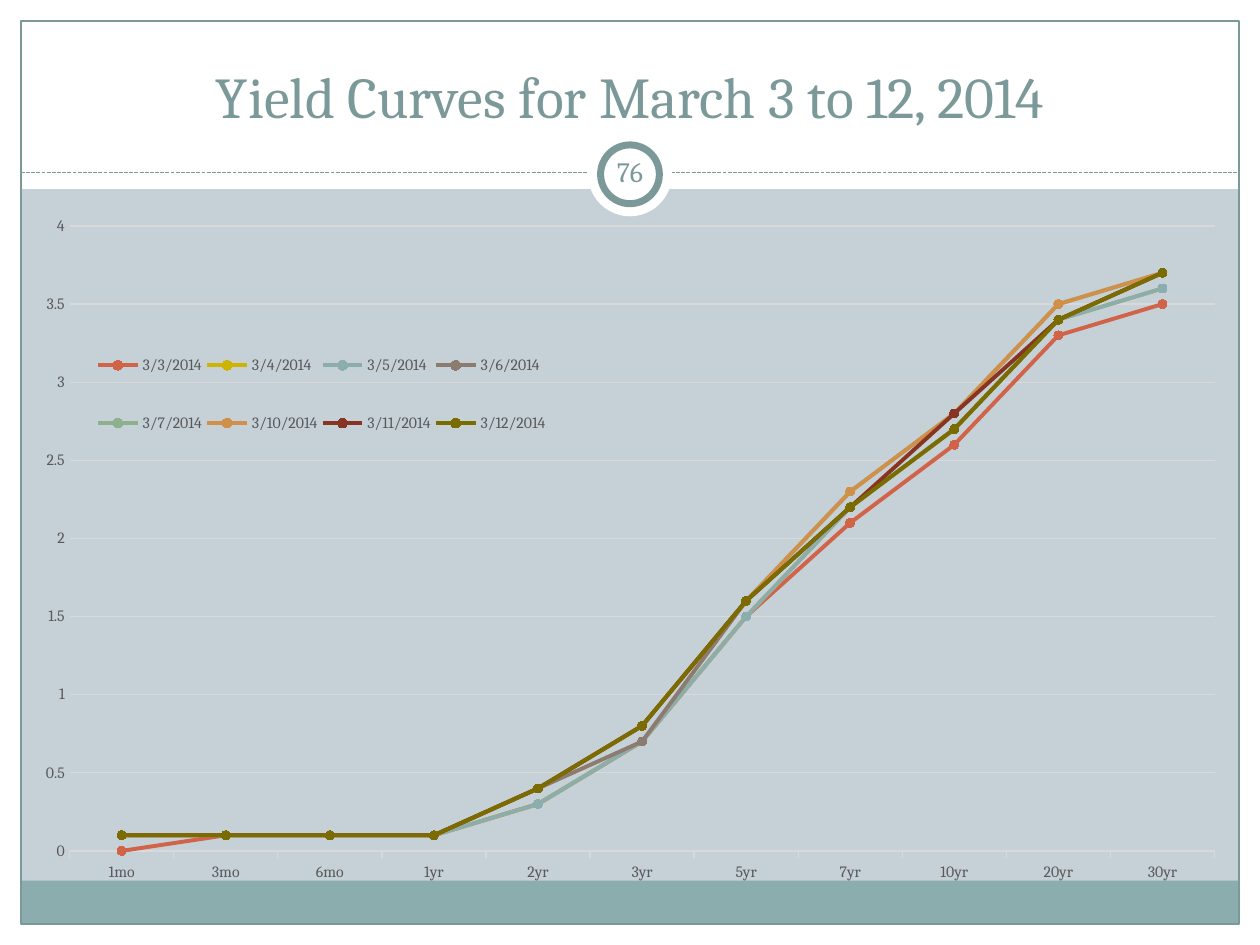
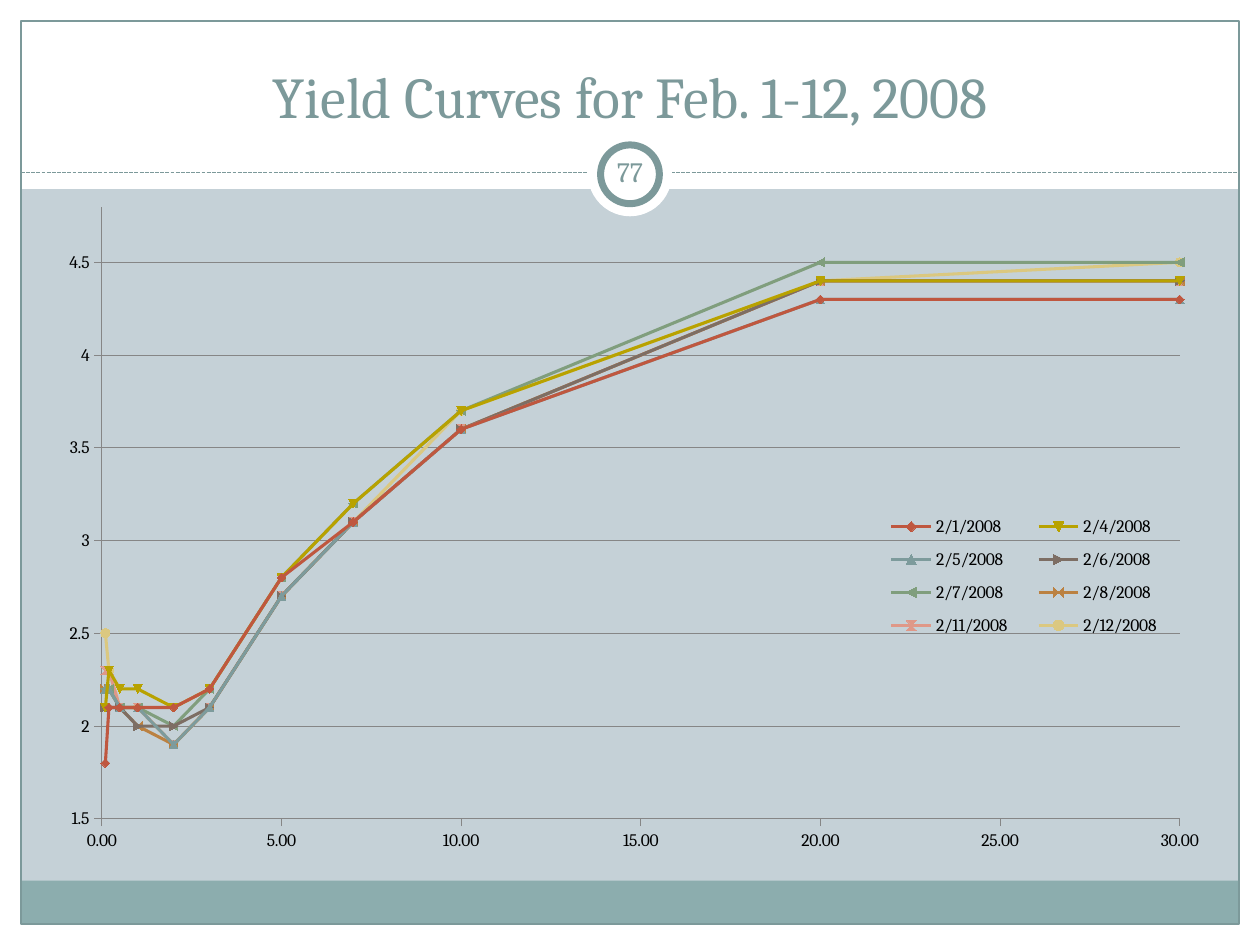
from dataclasses import dataclass
from typing import NamedTuple

from lxml.etree import SubElement
from pptx import Presentation
from pptx.chart.chart import Chart
from pptx.chart.data import CategoryChartData, XyChartData
from pptx.dml.color import RGBColor
from pptx.enum.chart import XL_CHART_TYPE as ChartType
from pptx.enum.chart import XL_LEGEND_POSITION as LegendPosition
from pptx.enum.chart import XL_MARKER_STYLE as MarkerStyle
from pptx.enum.chart import XL_TICK_MARK as TickMark
from pptx.enum.dml import MSO_LINE_DASH_STYLE as Dash
from pptx.enum.shapes import MSO_CONNECTOR as Connector
from pptx.enum.shapes import MSO_SHAPE as Preset
from pptx.enum.text import MSO_ANCHOR as Anchor
from pptx.enum.text import PP_ALIGN as Align
from pptx.oxml.ns import qn
from pptx.slide import Slide
from pptx.util import Emu, Inches, Pt

WIDTH, HEIGHT = Inches(10), Inches(7.5)
COLUMNS, ROWS = 60, 45


class Box(NamedTuple):
    """Left, top, width and height in grid cells."""

    left: float
    top: float
    width: float
    height: float


class Share(NamedTuple):
    """Left, top, width and height in percent of a chart."""

    x: float
    y: float
    w: float
    h: float


@dataclass(frozen=True)
class Theme:
    """Colours, font, type sizes and line widths of the slides."""

    font: str = "Cambria"
    paper: str = "C5D1D7"
    white: str = "FFFFFF"
    band: str = "8CADAE"
    accent: str = "7C999A"
    black: str = "000000"
    label: str = "595959"
    pale_grid: str = "D9D9D9"
    dark_grid: str = "868686"
    title_size: int = 33
    number_size: int = 16
    march_size: int = 9
    february_size: int = 10
    hairline: float = 0.75
    fine: float = 0.5
    ring: float = 4
    march_curve: float = 2.25
    february_curve: float = 1.75
    march_colors: tuple[str, ...] = (
        "D16349", "CCB400", "8CADAE", "8C7B70", "8FB08C", "D19049", "873522", "7A6C00")
    february_colors: tuple[str, ...] = (
        "BF573F", "B8A200", "7D9B9C", "7D6E64", "809E7D", "BB8141", "DF9888", "DBC880")


@dataclass(frozen=True)
class Panel:
    """One preset shape of the shared frame."""

    box: Box
    fill: str | None = None
    line: str | None = None
    weight: float = 0
    preset: Preset = Preset.RECTANGLE


@dataclass(frozen=True)
class Axis:
    """Range, step and look of one value axis."""

    low: float
    high: float
    step: float
    number_format: str = "General"
    grid: bool = True


@dataclass(frozen=True)
class YieldSlide:
    """Content and chart look of one yield curve slide."""

    title: str
    number: int
    box: Box
    plot: Share
    legend: Share
    legend_side: LegendPosition
    size: int
    ink: str
    grid: str
    grid_weight: float
    curve: float
    colors: tuple[str, ...]
    value_axis: Axis
    maturities: tuple
    curves: dict[str, tuple[float, ...]]
    maturity_axis: Axis | None = None


THEME = Theme()
PANELS = (
    Panel(Box(0, 44, 60, 1), THEME.white),
    Panel(Box(0, 0, 60, 9), THEME.white),
    Panel(Box(0, 0, 1, 45), THEME.white),
    Panel(Box(59, 0, 1, 45), THEME.white),
    Panel(Box(1, 41.94, 58, 2.06), THEME.band),
    Panel(Box(1, 1, 58, 43), None, THEME.accent, THEME.hairline),
)
BADGE = (
    Panel(Box(28, 6.3, 4, 4), THEME.white, preset=Preset.OVAL),
    Panel(Box(28.6, 6.9, 2.8, 2.8), THEME.white, THEME.accent, THEME.ring, Preset.OVAL),
)
TITLE_BOX = Box(2, 1.5, 56, 5)
NUMBER_BOX = Box(28.5, 6.7, 3, 2.9)
DIVIDER_ROW = 8.2

MARCH = YieldSlide(
    "Yield Curves for March 3 to 12, 2014", 76, Box(1, 9.65, 58, 34.85),
    Share(4, 3.2, 94, 85.4), Share(5.9, 15.6, 37.6, 21.2), LegendPosition.BOTTOM,
    THEME.march_size, THEME.label, THEME.pale_grid, THEME.hairline, THEME.march_curve,
    THEME.march_colors, Axis(0, 4, 0.5),
    ("1mo", "3mo", "6mo", "1yr", "2yr", "3yr", "5yr", "7yr", "10yr", "20yr", "30yr"),
    {
        "3/3/2014": (0, 0.1, 0.1, 0.1, 0.3, 0.7, 1.5, 2.1, 2.6, 3.3, 3.5),
        "3/4/2014": (0.1, 0.1, 0.1, 0.1, 0.3, 0.7, 1.5, 2.2, 2.7, 3.4, 3.6),
        "3/5/2014": (0.1, 0.1, 0.1, 0.1, 0.3, 0.7, 1.5, 2.2, 2.7, 3.4, 3.6),
        "3/6/2014": (0.1, 0.1, 0.1, 0.1, 0.4, 0.7, 1.6, 2.2, 2.7, 3.4, 3.7),
        "3/7/2014": (0.1, 0.1, 0.1, 0.1, 0.4, 0.8, 1.6, 2.3, 2.8, 3.5, 3.7),
        "3/10/2014": (0.1, 0.1, 0.1, 0.1, 0.4, 0.8, 1.6, 2.3, 2.8, 3.5, 3.7),
        "3/11/2014": (0.1, 0.1, 0.1, 0.1, 0.4, 0.8, 1.6, 2.2, 2.8, 3.4, 3.7),
        "3/12/2014": (0.1, 0.1, 0.1, 0.1, 0.4, 0.8, 1.6, 2.2, 2.7, 3.4, 3.7),
    },
)
FEBRUARY = YieldSlide(
    "Yield Curves for Feb. 1-12, 2008", 77, Box(2, 8.5, 55.8, 34.5),
    Share(5.1, 3.9, 92, 84.5), Share(70.3, 44.9, 27, 20), LegendPosition.RIGHT,
    THEME.february_size, THEME.black, THEME.dark_grid, THEME.fine, THEME.february_curve,
    THEME.february_colors, Axis(1.5, 4.8, 0.5),
    (0.1, 0.2, 0.5, 1, 2, 3, 5, 7, 10, 20, 30),
    {
        "2/1/2008": (1.8, 2.1, 2.1, 2.1, 2.1, 2.2, 2.8, 3.1, 3.6, 4.3, 4.3),
        "2/4/2008": (2.1, 2.3, 2.2, 2.2, 2.1, 2.2, 2.8, 3.2, 3.7, 4.4, 4.4),
        "2/5/2008": (2.2, 2.2, 2.1, 2.1, 1.9, 2.1, 2.7, 3.1, 3.6, 4.3, 4.3),
        "2/6/2008": (2.1, 2.1, 2.1, 2, 2, 2.1, 2.7, 3.1, 3.6, 4.4, 4.4),
        "2/7/2008": (2.2, 2.2, 2.1, 2.1, 2, 2.2, 2.8, 3.2, 3.7, 4.5, 4.5),
        "2/8/2008": (2.2, 2.2, 2.1, 2, 1.9, 2.1, 2.7, 3.1, 3.6, 4.4, 4.4),
        "2/11/2008": (2.3, 2.3, 2.1, 2.1, 1.9, 2.1, 2.7, 3.1, 3.6, 4.4, 4.4),
        "2/12/2008": (2.5, 2.3, 2.1, 2.1, 1.9, 2.1, 2.7, 3.1, 3.7, 4.4, 4.5),
    },
    Axis(0, 30, 5, "0.00", grid=False),
)


def across(columns: float) -> Emu:
    """Turn grid columns into a length."""
    return Emu(round(WIDTH * columns / COLUMNS))


def down(rows: float) -> Emu:
    """Turn grid rows into a length."""
    return Emu(round(HEIGHT * rows / ROWS))


def place(box: Box) -> tuple[Emu, Emu, Emu, Emu]:
    """Turn a grid box into lengths."""
    return across(box.left), down(box.top), across(box.width), down(box.height)


def style_line(line, color: str, weight: float) -> None:
    """Set the colour and width of a line."""
    line.color.rgb = RGBColor.from_string(color)
    line.width = Pt(weight)


def style_font(font, size: float, color: str) -> None:
    """Set the theme font with a size and colour."""
    font.name = THEME.font
    font.size = Pt(size)
    font.color.rgb = RGBColor.from_string(color)


def draw_panel(slide: Slide, panel: Panel) -> None:
    """Draw one shape of the shared frame."""
    shape = slide.shapes.add_shape(panel.preset, *place(panel.box))
    shape.shadow.inherit = False
    if panel.fill:
        shape.fill.solid()
        shape.fill.fore_color.rgb = RGBColor.from_string(panel.fill)
    else:
        shape.fill.background()
    if panel.line:
        style_line(shape.line, panel.line, panel.weight)
    else:
        shape.line.fill.background()


def draw_divider(slide: Slide) -> None:
    """Draw the dashed line under the title."""
    row = down(DIVIDER_ROW)
    divider = slide.shapes.add_connector(Connector.STRAIGHT, across(1), row, across(59), row)
    style_line(divider.line, THEME.accent, THEME.hairline)
    divider.line.dash_style = Dash.SQUARE_DOT
    SubElement(divider.element.spPr, qn("a:effectLst"))


def draw_text(slide: Slide, box: Box, text: str, size: int, anchor: Anchor, inset: float) -> None:
    """Draw one centred line of accent text."""
    frame = slide.shapes.add_textbox(*place(box)).text_frame
    frame.word_wrap = True
    frame.vertical_anchor = anchor
    frame.margin_left = frame.margin_right = Inches(inset)
    frame.margin_top = frame.margin_bottom = Inches(0.05)
    paragraph = frame.paragraphs[0]
    paragraph.alignment = Align.CENTER
    run = paragraph.add_run()
    run.text = text
    style_font(run.font, size, THEME.accent)


def set_layout(parent, index: int, share: Share, inner: bool = False) -> None:
    """Fix a chart part at shares of the chart."""
    for old in parent.findall(qn("c:layout")):
        parent.remove(old)
    layout = SubElement(parent, qn("c:layout"))
    parent.insert(index, layout)
    manual = SubElement(layout, qn("c:manualLayout"))
    settings = {"layoutTarget": "inner"} if inner else {}
    settings |= {"xMode": "edge", "yMode": "edge"}
    settings |= {name: f"{percent / 100:.3f}" for name, percent in share._asdict().items()}
    for name, value in settings.items():
        SubElement(manual, qn(f"c:{name}")).set("val", value)


def clear_fill(parent, index: int) -> None:
    """Make a chart area transparent and unlined."""
    properties = SubElement(parent, qn("c:spPr"))
    parent.insert(index, properties)
    SubElement(properties, qn("a:noFill"))
    SubElement(SubElement(properties, qn("a:ln")), qn("a:noFill"))


def style_value_axis(axis, look: Axis, content: YieldSlide) -> None:
    """Apply range, number format and gridlines."""
    axis.minimum_scale, axis.maximum_scale = look.low, look.high
    axis.major_unit = look.step
    axis.tick_labels.number_format = look.number_format
    axis.tick_labels.number_format_is_linked = False
    axis.has_major_gridlines = look.grid
    if look.grid:
        style_line(axis.major_gridlines.format.line, content.grid, content.grid_weight)


def style_axes(chart: Chart, content: YieldSlide) -> None:
    """Style both axes of a chart."""
    for axis in (chart.category_axis, chart.value_axis):
        axis.major_tick_mark, axis.minor_tick_mark = TickMark.OUTSIDE, TickMark.NONE
        style_line(axis.format.line, content.grid, content.grid_weight)
        style_font(axis.tick_labels.font, content.size, content.ink)
    style_value_axis(chart.value_axis, content.value_axis, content)
    if content.maturity_axis:
        style_value_axis(chart.category_axis, content.maturity_axis, content)
    else:
        chart.value_axis.major_tick_mark = TickMark.NONE
        chart.value_axis.format.line.fill.background()


def build_data(content: YieldSlide) -> tuple[ChartType, CategoryChartData | XyChartData]:
    """Choose the chart type and fill its data."""
    if content.maturity_axis is None:
        data = CategoryChartData()
        data.categories = content.maturities
        for name, rates in content.curves.items():
            data.add_series(name, rates)
        return ChartType.LINE_MARKERS, data
    data = XyChartData()
    for name, rates in content.curves.items():
        series = data.add_series(name)
        for maturity, rate in zip(content.maturities, rates):
            series.add_data_point(maturity, rate)
    return ChartType.XY_SCATTER_LINES, data


def draw_chart(slide: Slide, content: YieldSlide) -> None:
    """Draw the yield curves with their legend."""
    kind, data = build_data(content)
    chart = slide.shapes.add_chart(kind, *place(content.box), data).chart
    style_font(chart.font, THEME.february_size, THEME.black)
    chart.has_title = False
    chart.has_legend = True
    chart.legend.position = content.legend_side
    chart.legend.include_in_layout = False
    style_font(chart.legend.font, content.size, content.ink)
    style_axes(chart, content)
    chart.plots[0].vary_by_categories = False
    for series, color in zip(chart.plots[0].series, content.colors):
        series.smooth = False
        style_line(series.format.line, color, content.curve)
        if kind == ChartType.LINE_MARKERS:
            series.marker.style, series.marker.size = MarkerStyle.CIRCLE, 5
            series.marker.format.fill.solid()
            series.marker.format.fill.fore_color.rgb = RGBColor.from_string(color)
            style_line(series.marker.format.line, color, THEME.hairline)
    space = chart.element
    body = space.find(qn("c:chart"))
    plot_area = body.find(qn("c:plotArea"))
    set_layout(plot_area, 0, content.plot, inner=True)
    set_layout(body.find(qn("c:legend")), 1, content.legend)
    clear_fill(plot_area, len(plot_area))
    clear_fill(space, space.index(body) + 1)


def draw_slide(presentation, content: YieldSlide) -> None:
    """Add one slide with frame, title, number and chart."""
    slide = presentation.slides.add_slide(presentation.slide_layouts[6])
    slide.background.fill.solid()
    slide.background.fill.fore_color.rgb = RGBColor.from_string(THEME.paper)
    for panel in PANELS:
        draw_panel(slide, panel)
    draw_divider(slide)
    for panel in BADGE:
        draw_panel(slide, panel)
    draw_text(slide, TITLE_BOX, content.title, THEME.title_size, Anchor.BOTTOM, 0.1)
    draw_text(slide, NUMBER_BOX, str(content.number), THEME.number_size, Anchor.MIDDLE, 0.05)
    draw_chart(slide, content)


if __name__ == "__main__":
    deck = Presentation()
    deck.slide_width, deck.slide_height = WIDTH, HEIGHT
    for yield_slide in (MARCH, FEBRUARY):
        draw_slide(deck, yield_slide)
    deck.save("out.pptx")
